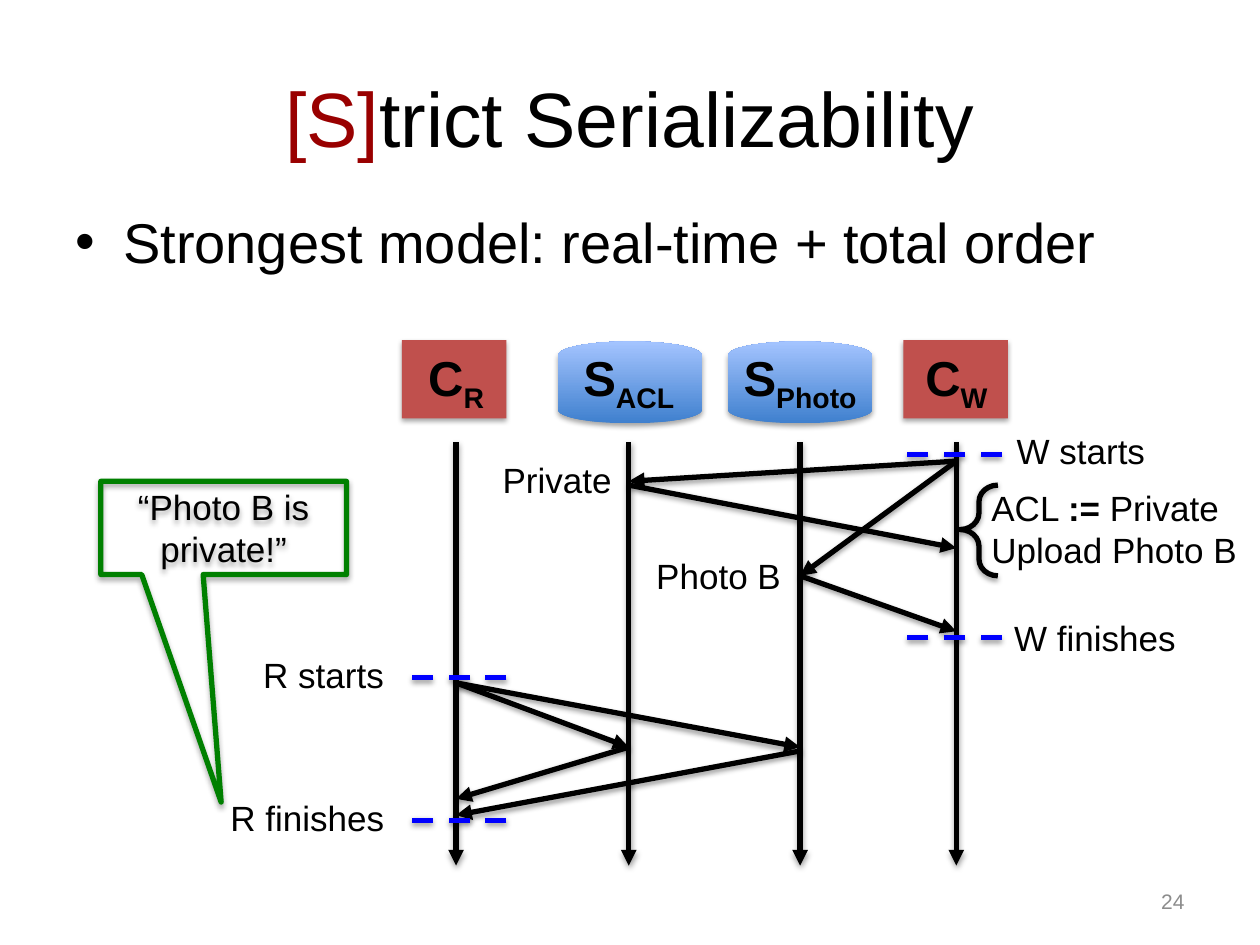
from typing import NamedTuple

from lxml import etree
from pptx import Presentation
from pptx import util as u
from pptx.dml.color import RGBColor
from pptx.enum import dml, shapes, text
from pptx.oxml import ns

BLACK = RGBColor(0x00, 0x00, 0x00)
DARK_RED = RGBColor(0x99, 0x00, 0x00)
BRICK = RGBColor(0xC0, 0x50, 0x4D)
DISK_DARK = RGBColor(0x3F, 0x80, 0xCE)
DISK_LIGHT = RGBColor(0xA4, 0xC4, 0xFF)
BLUE = RGBColor(0x00, 0x00, 0xFF)
GREEN = RGBColor(0x00, 0x80, 0x00)
GRAY = RGBColor(0x8C, 0x8C, 0x8C)
FONT = "Arial"
LINE_WIDTH = u.Pt(3)
DASH_LENGTH = 0.82

# Horizontal positions of the four timelines
READER, ACL, PHOTO, WRITER = 3.62, 4.99, 6.35, 7.59


class Run(NamedTuple):
    text: str
    bold: bool = False
    color: RGBColor = BLACK
    subscript: bool = False


class Process(NamedTuple):
    letter: str
    subscript: str
    x: float
    is_server: bool
    shape_left: float
    label_width: float = 1.14


class Message(NamedTuple):
    start: tuple[float, float]
    end: tuple[float, float]


class Label(NamedTuple):
    text: str
    left: float
    top: float
    width: float


class Mark(NamedTuple):
    left: float
    y: float


PROCESSES = [
    Process("C", "R", READER, False, 3.19),
    Process("S", "ACL", ACL, True, 4.43),
    Process("S", "Photo", PHOTO, True, 5.78, 1.26),
    Process("C", "W", WRITER, False, 7.17),
]
MESSAGES = [
    Message((WRITER, 3.66), (ACL, 3.82)),
    Message((WRITER, 3.66), (PHOTO, 4.57)),
    Message((ACL, 3.85), (WRITER, 4.35)),
    Message((PHOTO, 4.57), (WRITER, 5.01)),
    Message((READER, 5.42), (ACL, 5.93)),
    Message((READER, 5.42), (PHOTO, 5.93)),
    Message((ACL, 5.93), (READER, 6.34)),
    Message((PHOTO, 5.96), (READER, 6.47)),
]
LABELS = [
    Label("W starts", 7.97, 3.36, 1.28),
    Label("W finishes", 7.95, 4.84, 1.54),
    Label("Private", 3.89, 3.59, 1.11),
    Label("Photo B", 5.11, 4.35, 1.25),
    Label("R starts", 1.99, 5.14, 1.21),
    Label("R finishes", 1.73, 6.27, 1.47),
]
MARKS = [Mark(7.13, 3.61), Mark(7.13, 5.06), Mark(3.2, 5.38), Mark(3.2, 6.51)]


def add_shadow(shape, opacity: int, distance: float) -> None:
    properties = shape._element.spPr
    effects = properties.find(ns.qn("a:effectLst"))
    if effects is None:
        effects = etree.SubElement(properties, ns.qn("a:effectLst"))
    shadow = etree.SubElement(
        effects, ns.qn("a:outerShdw"), blurRad=str(u.Pt(3.1)), dist=str(u.Pt(distance)),
        dir="5400000", rotWithShape="0")
    color = etree.SubElement(shadow, ns.qn("a:srgbClr"), val=str(BLACK))
    etree.SubElement(color, ns.qn("a:alpha"), val=str(opacity * 1000))


def add_line(slide, start: tuple[float, float], end: tuple[float, float],
             color: RGBColor = BLACK, dashed: bool = False) -> None:
    connector = slide.shapes.add_connector(
        shapes.MSO_CONNECTOR.STRAIGHT, *map(u.Inches, start + end))
    connector.line.color.rgb = color
    connector.line.width = LINE_WIDTH
    if dashed:
        connector.line.dash_style = dml.MSO_LINE.DASH
    else:
        etree.SubElement(connector.line._get_or_add_ln(), ns.qn("a:tailEnd"), type="triangle")
    add_shadow(connector, 38, 1.6)


def add_shape(slide, kind, left: float, top: float, width: float, height: float):
    shape = slide.shapes.add_shape(kind, *map(u.Inches, (left, top, width, height)))
    shape.shadow.inherit = False
    return shape


def outline(shape, color: RGBColor) -> None:
    shape.fill.background()
    shape.line.color.rgb = color
    shape.line.width = LINE_WIDTH


def write(shape, paragraphs: list[list[Run]], size: float,
          align=text.PP_ALIGN.LEFT, anchor=text.MSO_ANCHOR.TOP, wrap: bool = True) -> None:
    frame = shape.text_frame
    frame.word_wrap = wrap
    frame.vertical_anchor = anchor
    for index, runs in enumerate(paragraphs):
        paragraph = frame.add_paragraph() if index else frame.paragraphs[0]
        paragraph.alignment = align
        for part in runs:
            run = paragraph.add_run()
            run.text = part.text
            run.font.name = FONT
            run.font.size = u.Pt(size)
            run.font.bold = part.bold
            run.font.color.rgb = part.color
            if part.subscript:
                run._r.get_or_add_rPr().set("baseline", "-25000")


def add_text(slide, left: float, top: float, width: float, height: float,
             paragraphs: list[list[Run]], size: float, **options):
    box = slide.shapes.add_textbox(*map(u.Inches, (left, top, width, height)))
    write(box, paragraphs, size, **options)
    return box


def add_process_shape(slide, process: Process) -> None:
    if process.is_server:
        shape = add_shape(slide, shapes.MSO_SHAPE.FLOWCHART_MAGNETIC_DISK,
                          process.shape_left, 2.71, 1.14, 0.65)
        shape.fill.gradient()
        shape.fill.gradient_angle = 90
        for stop, color in zip(shape.fill.gradient_stops, (DISK_DARK, DISK_LIGHT)):
            stop.color.rgb = color
    else:
        shape = add_shape(slide, shapes.MSO_SHAPE.RECTANGLE, process.shape_left, 2.7, 0.83, 0.62)
        shape.fill.solid()
        shape.fill.fore_color.rgb = BRICK
    shape.line.fill.background()
    add_shadow(shape, 35, 1.8)


def add_timeline(slide, process: Process) -> None:
    add_line(slide, (process.x, 3.51), (process.x, 6.87))
    add_text(slide, process.x - process.label_width / 2, 2.71, process.label_width, 1.04,
             [[Run(process.letter, True), Run(process.subscript, True, subscript=True)]],
             28, align=text.PP_ALIGN.CENTER)


def main() -> None:
    presentation = Presentation()
    presentation.slide_width, presentation.slide_height = u.Inches(10), u.Inches(7.5)
    slide = presentation.slides.add_slide(presentation.slide_layouts[6])

    # Title, bullet and page number
    add_text(slide, 0.5, 0.3, 9, 1.25,
             [[Run("[S]", color=DARK_RED), Run("trict Serializability")]], 44,
             align=text.PP_ALIGN.CENTER, anchor=text.MSO_ANCHOR.MIDDLE)
    body = add_text(slide, 0.5, 1.6, 9, 0.8,
                    [[Run("Strongest model: real-time + total order")]], 32)
    paragraph = body.text_frame.paragraphs[0]
    paragraph.space_before = u.Pt(6.4)
    properties = paragraph._p.get_or_add_pPr()
    properties.set("marL", str(u.Inches(0.38)))
    properties.set("indent", str(u.Inches(-0.38)))
    etree.SubElement(properties, ns.qn("a:buFont"), typeface=FONT)
    etree.SubElement(properties, ns.qn("a:buChar"), char="•")
    add_text(slide, 7.17, 6.95, 2.33, 0.4, [[Run("24", color=GRAY)]], 12,
             align=text.PP_ALIGN.RIGHT, anchor=text.MSO_ANCHOR.MIDDLE)

    # Clients and servers with their timelines
    for process in PROCESSES:
        add_process_shape(slide, process)
    for process in PROCESSES:
        add_timeline(slide, process)

    # Messages, start and finish marks, labels
    for message in MESSAGES:
        add_line(slide, message.start, message.end)
    for mark in MARKS:
        add_line(slide, (mark.left + DASH_LENGTH, mark.y), (mark.left, mark.y), BLUE, dashed=True)
    for label in LABELS:
        add_text(slide, label.left, label.top, label.width, 0.44, [[Run(label.text)]], 20, wrap=False)

    # Operations of the writer
    brace = add_shape(slide, shapes.MSO_SHAPE.LEFT_BRACE, 7.62, 3.85, 0.3, 0.72)
    brace.adjustments[0], brace.adjustments[1] = 0.44, 0.49
    outline(brace, BLACK)
    add_shadow(brace, 38, 1.6)
    add_text(slide, 7.77, 3.81, 2.26, 0.77,
             [[Run("ACL "), Run(":=", True), Run(" Private")], [Run("Upload Photo B")]],
             20, wrap=False)

    # What the reader concludes
    callout = add_shape(slide, shapes.MSO_SHAPE.RECTANGULAR_CALLOUT, 0.8, 3.82, 1.95, 0.74)
    callout.adjustments[0], callout.adjustments[1] = -0.01, 2.94
    outline(callout, GREEN)
    add_shadow(callout, 35, 1.8)
    write(callout, [[Run("“Photo B is private!”")]], 20,
          align=text.PP_ALIGN.CENTER, anchor=text.MSO_ANCHOR.MIDDLE)

    presentation.save("out.pptx")


if __name__ == "__main__":
    main()
